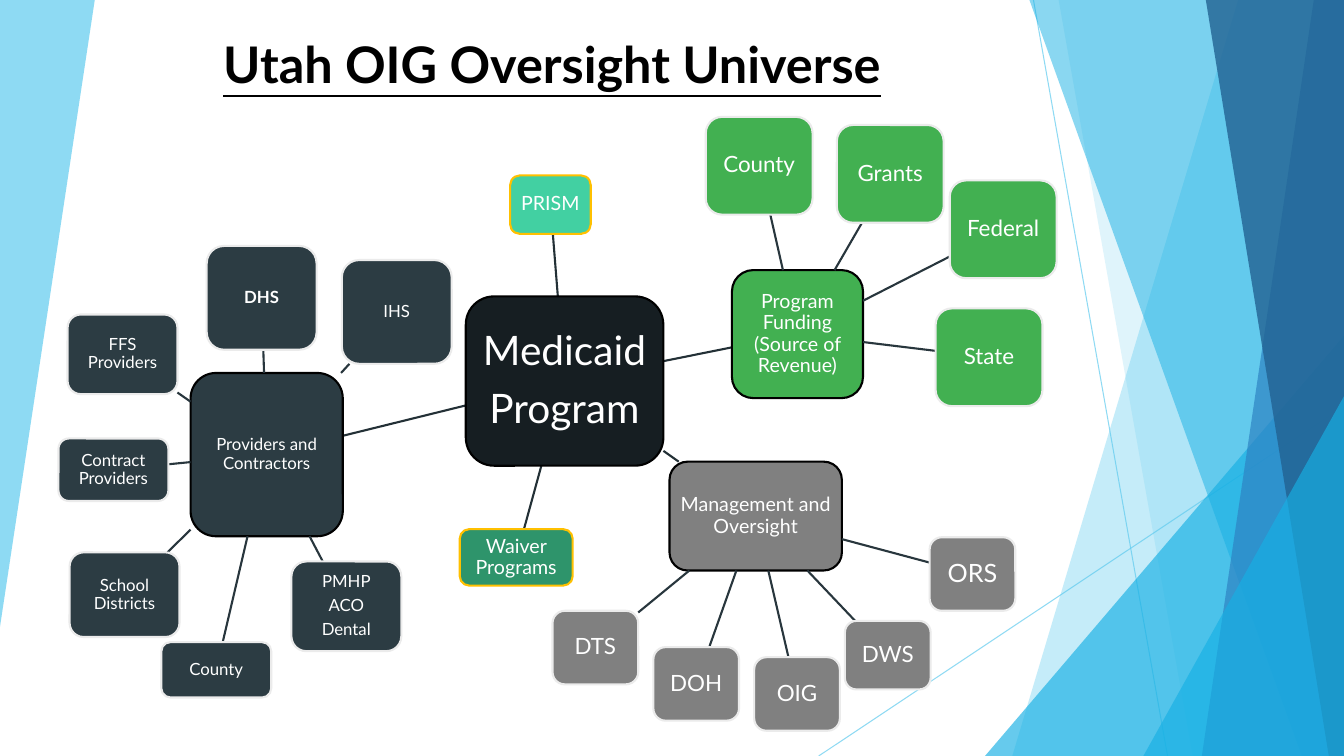
from lxml import etree
from pptx import Presentation
from pptx import util as u
from pptx.dml import color
from pptx.enum import shapes, text
from pptx.oxml import ns


def rgb(code):
    return color.RGBColor.from_string(code)


def fade(shape, percent):
    for node in shape.element.spPr.iter(ns.qn("a:srgbClr")):
        etree.SubElement(node, ns.qn("a:alpha")).set("val", str(percent * 1000))


def clip(box, other):
    x, y, w, h = box
    cx, cy = x + w / 2, y + h / 2
    dx = other[0] + other[2] / 2 - cx
    dy = other[1] + other[3] / 2 - cy
    part = 1 / max(abs(dx) / (w / 2), abs(dy) / (h / 2))
    return cx + dx * part, cy + dy * part


class Chart:
    face = "Lato"
    white = "FFFFFF"
    black = "000000"
    width = 1.5

    def __init__(self, slide):
        self.slide = slide
        self.tree = slide.shapes

    def style(self, para, size, tint, bold=False):
        para.alignment = text.PP_ALIGN.CENTER
        font = para.font
        font.name, font.size, font.bold = self.face, u.Pt(size), bold
        font.color.rgb = rgb(tint)

    def title(self, words, area):
        shape = self.tree.title
        shape.left, shape.top, shape.width, shape.height = map(u.Inches, area)
        frame = shape.text_frame
        frame.text = words
        frame.auto_size = text.MSO_AUTO_SIZE.NONE
        frame.vertical_anchor = text.MSO_ANCHOR.MIDDLE
        self.style(frame.paragraphs[0], 36, self.black, True)
        frame.paragraphs[0].font.underline = True

    def paint(self, shape, fill, alpha):
        shape.shadow.inherit = False
        shape.fill.solid()
        shape.fill.fore_color.rgb = rgb(fill)
        shape.line.fill.background()
        fade(shape, alpha)

    def shard(self, points, fill, alpha):
        spots = [(u.Inches(x), u.Inches(y)) for x, y in points]
        maker = self.tree.build_freeform(*spots[0])
        maker.add_line_segments(spots[1:], close=True)
        self.paint(maker.convert_to_shape(), fill, alpha)

    def wedge(self, area, fill, alpha):
        kind = shapes.MSO_SHAPE.ISOSCELES_TRIANGLE
        shape = self.tree.add_shape(kind, *map(u.Inches, area))
        shape.adjustments[0] = 1
        self.paint(shape, fill, alpha)

    def line(self, start, end, tint, width=width):
        kind = shapes.MSO_CONNECTOR.STRAIGHT
        link = self.tree.add_connector(kind, *map(u.Inches, start + end))
        link.line.color.rgb = rgb(tint)
        link.line.width = u.Pt(width)
        etree.SubElement(link.element.spPr, ns.qn("a:effectLst"))
        return link

    def spoke(self, hub, kid, tint):
        self.line(clip(hub, kid), clip(kid, hub), tint)

    def node(self, words, area, size, fill, edge, bold=False):
        kind = shapes.MSO_SHAPE.ROUNDED_RECTANGLE
        shape = self.tree.add_shape(kind, *map(u.Inches, area))
        shape.shadow.inherit = False
        shape.fill.solid()
        shape.fill.fore_color.rgb = rgb(fill)
        shape.line.color.rgb = rgb(edge)
        shape.line.width = u.Pt(self.width)
        frame = shape.text_frame
        frame.word_wrap = True
        frame.vertical_anchor = text.MSO_ANCHOR.MIDDLE
        frame.margin_left = frame.margin_right = u.Inches(0.04)
        frame.margin_top = frame.margin_bottom = u.Inches(0.04)
        frame.text = words
        for para in frame.paragraphs:
            self.style(para, size, self.white, bold)
            para.line_spacing = 0.9
            para.space_after = u.Pt(0.35 * size)


SKY, AQUA, GOLD, PALE = "5FCBEF", "17B0E4", "FFC000", "EBEBEB"
RIGHT, BASE = 13.33, 7.5

CORE = (4.62, 2.94, 1.96, 1.68)
LEAVES = [
    ("PRISM", (5.06, 1.74, 0.8, 0.58), "42D0A2"),
    ("Waiver Programs", (4.56, 5.25, 1.12, 0.56), "2E946B"),
]
HUBS = [
    ("Program Funding (Source of Revenue)", (7.26, 2.68, 1.3, 1.27), 14, "42B051", 16, [
        ("Grants", (8.3, 1.24, 1.06, 0.97)),
        ("Federal", (9.42, 1.79, 1.06, 0.97)),
        ("State", (9.28, 3.06, 1.06, 0.97)),
        ("County", (7, 1.16, 1.06, 0.97)),
    ]),
    ("Management and Oversight", (6.64, 4.58, 1.71, 1.08), 14, "808080", 16, [
        ("DTS", (5.48, 6.06, 0.85, 0.73)),
        ("ORS", (9.22, 5.33, 0.85, 0.73)),
        ("DWS", (8.38, 6.16, 0.85, 0.68)),
        ("OIG", (7.48, 6.52, 0.85, 0.73)),
        ("DOH", (6.48, 6.42, 0.85, 0.73)),
    ]),
    ("Providers and Contractors", (1.89, 3.7, 1.51, 1.62), 12, "2C3C43", 12, [
        ("Contract Providers", (0.58, 4.35, 1.09, 0.62)),
        ("FFS Providers", (0.67, 3.12, 1.09, 0.79)),
        ("IHS", (3.39, 2.58, 1.09, 1.03)),
        ("School Districts", (0.69, 5.48, 1.09, 0.84)),
        ("PMHP\nACO\nDental", (2.89, 5.57, 1.09, 0.89)),
        ("County", (1.6, 6.37, 1.09, 0.55)),
        ("DHS", (2.05, 2.44, 1.09, 1.03)),
    ]),
]


def band(top, low):
    return [(top, 0), (RIGHT, 0), (RIGHT, BASE), (low, BASE)]


def main():
    deck = Presentation()
    deck.slide_width, deck.slide_height = u.Inches(RIGHT), u.Inches(BASE)
    chart = Chart(deck.slides.add_slide(deck.slide_layouts[5]))
    chart.title("Utah OIG Oversight Universe", (0.81, 0.27, 9.33, 0.71))

    chart.shard([(0, 0), (0.94, 0), (0, 6.22)], SKY, 70)
    for start, end in [((10.25, 0), (11.58, BASE)), ((RIGHT, 4.03), (8.12, BASE))]:
        fade(chart.line(start, end, SKY, 0.75), 70)
    chart.shard(band(12.28, 10.04), SKY, 36)
    chart.shard(band(10.5, 11.83), SKY, 20)
    chart.wedge((9.77, 3.33, 3.56, 4.17), AQUA, 66)
    chart.shard(band(10.21, 12.91), AQUA, 50)
    chart.shard(band(13.03, 11.92), "2E83C3", 70)
    chart.shard(band(11.96, 13.18), "226292", 80)
    chart.wedge((11.34, 3.93, 1.99, 3.57), AQUA, 66)

    for area in [item[1] for item in LEAVES + HUBS]:
        chart.spoke(CORE, area, "233036")
    chart.node("Medicaid\nProgram", CORE, 29, "161E22", chart.black)
    for words, area, fill in LEAVES:
        chart.node(words, area, 14, fill, GOLD)
    for words, area, size, fill, small, kids in HUBS:
        chart.node(words, area, size, fill, chart.black)
        for name, spot in kids:
            chart.spoke(area, spot, "28363D")
            points = 18 if name == "ORS" else small
            chart.node(name, spot, points, fill, PALE, name == "DHS")

    deck.save("out.pptx")


if __name__ == "__main__":
    main()
